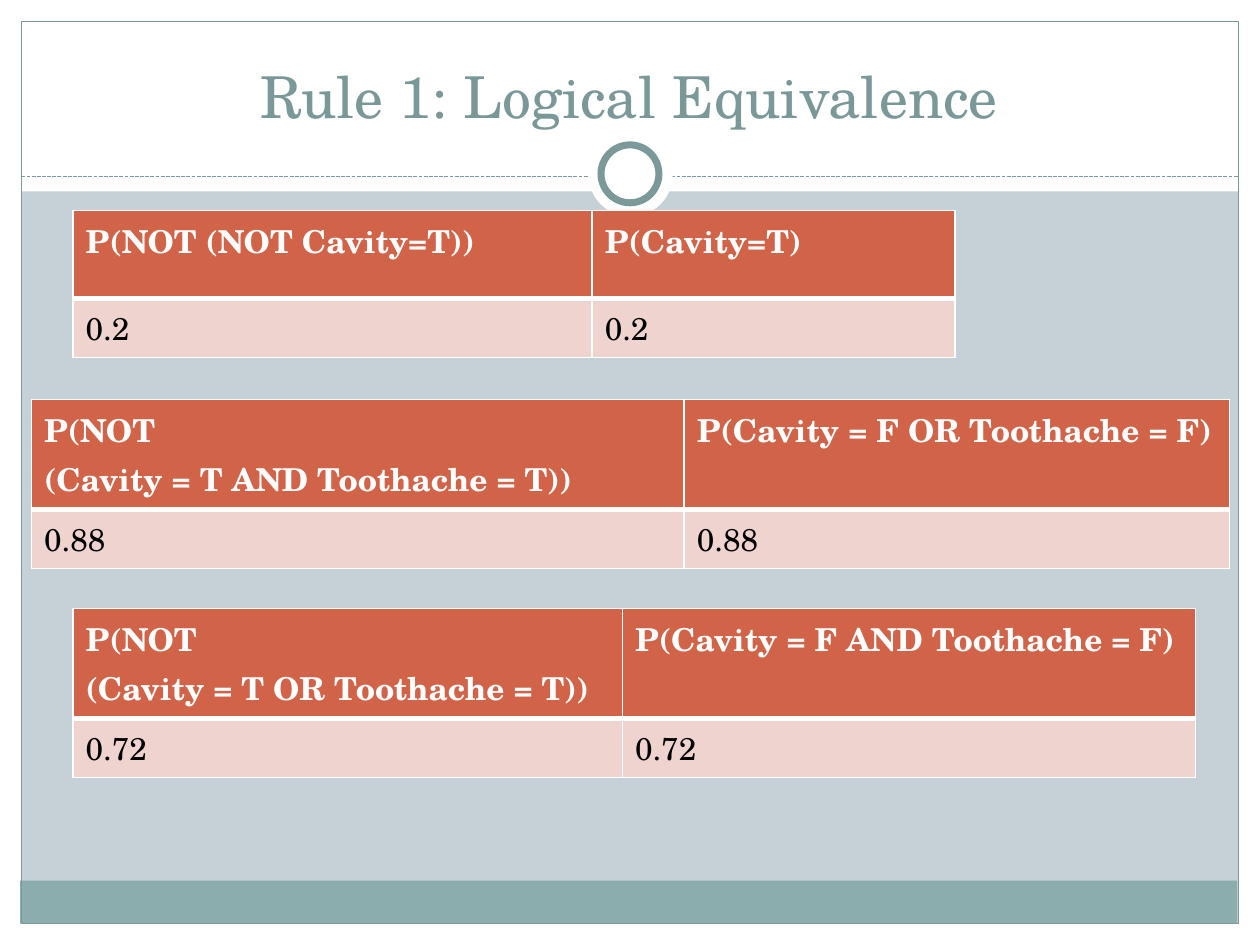
from dataclasses import dataclass

from lxml.etree import SubElement
from pptx import Presentation
from pptx.dml.color import RGBColor
from pptx.enum.dml import MSO_LINE_DASH_STYLE as Dash
from pptx.enum.shapes import MSO_CONNECTOR as Connector, MSO_SHAPE as Shape
from pptx.enum.text import MSO_ANCHOR as Anchor, MSO_AUTO_SIZE as AutoSize, PP_ALIGN as Align
from pptx.oxml import parse_xml
from pptx.oxml.ns import nsdecls, qn
from pptx.util import Inches, Pt


@dataclass(frozen=True)
class Theme:
    font: str = "TeX Gyre Schola"
    title_size: int = 33
    table_size: int = 18
    background: str = "C5D1D7"
    white: str = "FFFFFF"
    black: str = "000000"
    footer: str = "8CADAE"
    frame: str = "7C999A"
    title: str = "7B9899"
    header: str = "D16349"
    body: str = "EED3CF"


THEME = Theme()
ROW_HEIGHTS = (0.7, 0.41)
# left, top, column widths, rows
TABLES = (
    (0.58, 1.67, (4.12, 2.88),
     (("P(NOT (NOT Cavity=T))", "P(Cavity=T)"), ("0.2", "0.2"))),
    (0.25, 3.17, (5.18, 4.33),
     (("P(NOT \v(Cavity = T AND Toothache = T))", "P(Cavity = F OR Toothache = F)"),
      ("0.88", "0.88"))),
    (0.58, 4.83, (4.36, 4.55),
     (("P(NOT \v(Cavity = T OR Toothache = T))", "P(Cavity = F AND Toothache = F)"),
      ("0.72", "0.72"))),
)


def color(value):
    return RGBColor.from_string(value)


def format_text(text_frame, size, text_color, bold=False):
    for paragraph in text_frame.paragraphs:
        for run in paragraph.runs:
            run.font.name = THEME.font
            run.font.size = Pt(size)
            run.font.bold = bold
            run.font.color.rgb = color(text_color)


def add_shape(slide, kind, box, fill=None, line_width=None):
    shape = slide.shapes.add_shape(kind, *map(Inches, box))
    shape.shadow.inherit = False
    if fill:
        shape.fill.solid()
        shape.fill.fore_color.rgb = color(fill)
    else:
        shape.fill.background()
    if line_width:
        shape.line.color.rgb = color(THEME.frame)
        shape.line.width = Pt(line_width)
    else:
        shape.line.fill.background()


def add_divider(slide, left, right, y):
    divider = slide.shapes.add_connector(
        Connector.STRAIGHT, Inches(left), Inches(y), Inches(right), Inches(y))
    divider.line.color.rgb = color(THEME.frame)
    divider.line.width = Pt(0.75)
    divider.line.dash_style = Dash.SQUARE_DOT
    SubElement(divider._element.spPr, qn("a:effectLst"))


def add_frame(slide):
    """Draw the white margins, footer band, outline and ring."""
    for box in ((0, 7.33, 10, 0.17), (0, 0, 10, 1.52),
                (0, 0, 0.17, 7.5), (9.83, 0, 0.17, 7.5)):
        add_shape(slide, Shape.RECTANGLE, box, THEME.white)
    add_shape(slide, Shape.RECTANGLE, (0.16, 6.99, 9.66, 0.34), THEME.footer)
    add_shape(slide, Shape.RECTANGLE, (0.17, 0.17, 9.66, 7.16), line_width=0.75)
    add_divider(slide, 0.17, 9.83, 1.4)
    add_shape(slide, Shape.OVAL, (4.67, 1.05, 0.67, 0.67), THEME.white)
    add_shape(slide, Shape.OVAL, (4.77, 1.15, 0.46, 0.46), THEME.white, 4)


def set_title(slide, text):
    title = slide.shapes.title
    title.left, title.top, title.width, title.height = map(Inches, (0.33, 0.25, 9.33, 0.83))
    text_frame = title.text_frame
    text_frame.text = text
    text_frame.auto_size = AutoSize.NONE
    text_frame.vertical_anchor = Anchor.BOTTOM
    text_frame.paragraphs[0].alignment = Align.CENTER
    format_text(text_frame, THEME.title_size, THEME.title)
    slide.shapes._spTree.append(title._element)  # in front of the white band


def set_borders(cell, **widths):
    """Give the cell white borders; widths in points by side L, R, T, B."""
    properties = cell._tc.get_or_add_tcPr()
    for index, (side, width) in enumerate(widths.items()):
        properties.insert(index, parse_xml(
            f'<a:ln{side} {nsdecls("a")} w="{Pt(width)}"><a:solidFill>'
            f'<a:srgbClr val="{THEME.white}"/></a:solidFill></a:ln{side}>'))


def format_cell(cell, text, is_header):
    cell.text = text
    cell.fill.solid()
    cell.fill.fore_color.rgb = color(THEME.header if is_header else THEME.body)
    cell.margin_left = cell.margin_right = Inches(0.1)
    cell.margin_top = cell.margin_bottom = Inches(0.05)
    format_text(cell.text_frame, THEME.table_size,
                THEME.white if is_header else THEME.black, is_header)
    top, bottom = (1, 3) if is_header else (3, 1)
    set_borders(cell, L=1, R=1, T=top, B=bottom)


def add_table(slide, left, top, widths, rows):
    table = slide.shapes.add_table(
        len(rows), len(widths), Inches(left), Inches(top),
        Inches(sum(widths)), Inches(sum(ROW_HEIGHTS))).table
    for column, width in zip(table.columns, widths):
        column.width = Inches(width)
    for index, (row, height, texts) in enumerate(zip(table.rows, ROW_HEIGHTS, rows)):
        row.height = Inches(height)
        for cell, text in zip(row.cells, texts):
            format_cell(cell, text, is_header=index == 0)


def main():
    presentation = Presentation()
    presentation.slide_width, presentation.slide_height = Inches(10), Inches(7.5)
    slide = presentation.slides.add_slide(presentation.slide_layouts[5])
    slide.background.fill.solid()
    slide.background.fill.fore_color.rgb = color(THEME.background)
    add_frame(slide)
    set_title(slide, "Rule 1: Logical Equivalence")
    for table in TABLES:
        add_table(slide, *table)
    presentation.save("out.pptx")


if __name__ == "__main__":
    main()
